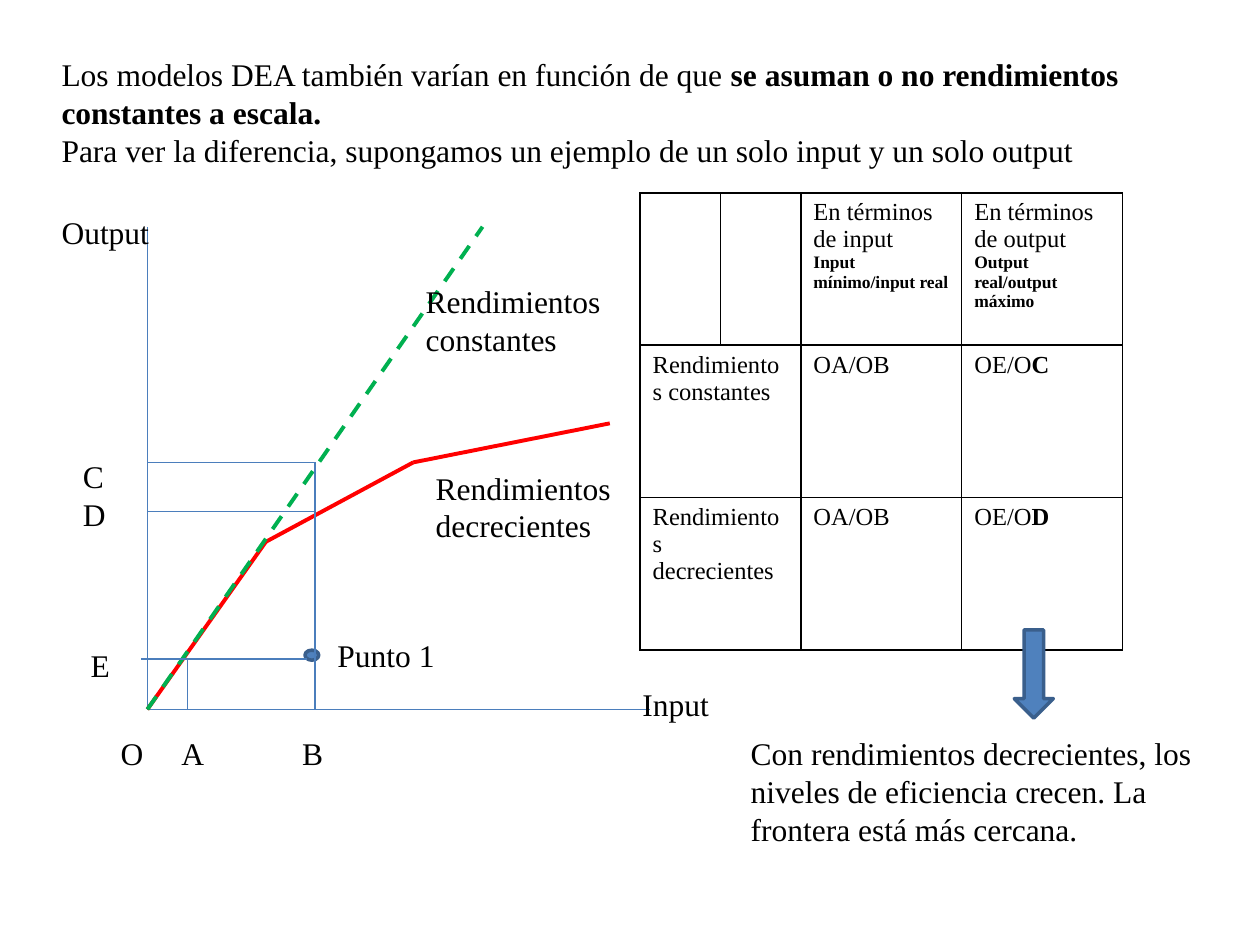
from dataclasses import dataclass

from lxml import etree
from pptx import Presentation
from pptx.dml.color import RGBColor
from pptx.enum.dml import MSO_LINE
from pptx.enum.shapes import MSO_CONNECTOR, MSO_SHAPE
from pptx.oxml.ns import qn
from pptx.util import Inches, Pt

STRAIGHT = MSO_CONNECTOR.STRAIGHT
DASH = MSO_LINE.DASH
OVAL = MSO_SHAPE.OVAL
DOWN_ARROW = MSO_SHAPE.DOWN_ARROW


@dataclass(frozen=True)
class Theme:
    font: str = "Times New Roman"
    ink: str = "000000"
    guide: str = "4B7EBC"
    fill: str = "4F81BD"
    outline: str = "3A5F8C"
    decreasing: str = "FF0000"
    constant: str = "00B050"
    body: int = 18
    cell: int = 14
    note: int = 10
    thin: float = 0.75
    thick: float = 2.25
    border: float = 1
    edge: float = 2


THEME = Theme()


def color(value):
    return RGBColor.from_string(value)


def add_span(para, text, size=THEME.body, bold=False):
    span = para.add_run()
    span.text = text
    span.font.name = THEME.font
    span.font.size = Pt(size)
    span.font.bold = bold
    span.font.color.rgb = color(THEME.ink)


def fill_frame(frame, paragraphs):
    for index, spans in enumerate(paragraphs):
        para = frame.add_paragraph() if index else frame.paragraphs[0]
        for span in spans:
            add_span(para, *span)


def add_text(page, box, paragraphs):
    frame = page.shapes.add_textbox(*map(Inches, box)).text_frame
    frame.word_wrap = True
    fill_frame(frame, paragraphs)


def add_line(page, start, end, line_color=THEME.guide, width=THEME.thin, dash=None):
    line = page.shapes.add_connector(STRAIGHT, *map(Inches, start + end))
    line.line.color.rgb = color(line_color)
    line.line.width = Pt(width)
    if dash:
        line.line.dash_style = dash
    etree.SubElement(line._element.spPr, qn("a:effectLst"))


def add_solid(page, kind, box):
    shape = page.shapes.add_shape(kind, *map(Inches, box))
    shape.shadow.inherit = False
    shape.fill.solid()
    shape.fill.fore_color.rgb = color(THEME.fill)
    shape.line.color.rgb = color(THEME.outline)
    shape.line.width = Pt(THEME.edge)


def add_intro(page, box):
    add_text(page, box, [
        [("Los modelos DEA también varían en función de que ",),
         ("se asuman o no rendimientos constantes a escala.", THEME.body, True)],
        [("Para ver la diferencia, supongamos un ejemplo de un solo input "
          "y un solo output",)],
    ])


def add_frontier(page, box):
    left, top, width, height = box

    def at(x, y):
        return left + x, top + height - y

    input_a, input_b = 0.32, 1.33
    output_e, output_d, output_c = 0.4, 1.57, 1.96

    add_line(page, at(0, height), at(0, 0))
    add_line(page, at(0, 0), at(width, 0))

    frontier = [(0, 0), (0.94, 1.33), (2.11, output_c), (3.67, 2.27)]
    for start, end in zip(frontier, frontier[1:]):
        add_line(page, at(*start), at(*end), THEME.decreasing, THEME.thick)
    add_line(page, at(0, 0), at(2.66, height), THEME.constant, THEME.thick, DASH)

    add_solid(page, OVAL, (*at(1.25, 0.47), 0.11, 0.08))
    add_line(page, at(input_b, 0), at(input_b, output_c))
    add_line(page, at(input_a, 0), at(input_a, output_e))
    add_line(page, at(1.27, output_e), at(-0.05, output_e))
    for output in (output_d, output_c):
        add_line(page, at(input_b, output), at(0, output))

    labels = [
        ("Output", -0.78, 3.99, 1.09, 0.4),
        ("Input", 3.83, 0.24, 1.48, 0.4),
        ("Punto 1", 1.41, 0.63, 1.09, 0.4),
        ("Rendimientos constantes", 2.11, 3.44, 1.88, 0.71),
        ("Rendimientos decrecientes", 2.19, 1.96, 1.88, 0.71),
        ("O", -0.31, -0.15, 0.45, 0.4),
        ("A", 0.17, -0.15, 0.45, 0.4),
        ("B", 1.13, -0.15, 0.45, 0.4),
        ("C", -0.61, 2.05, 0.45, 0.4),
        ("D", -0.61, 1.75, 0.45, 0.4),
        ("E", -0.55, 0.55, 0.45, 0.4),
    ]
    for text, x, y, label_width, label_height in labels:
        add_text(page, (*at(x, y), label_width, label_height), [[(text,)]])


def add_borders(cell):
    properties = cell._tc.get_or_add_tcPr()
    for index, side in enumerate(("lnL", "lnR", "lnT", "lnB")):
        border = etree.Element(qn(f"a:{side}"), w=str(Pt(THEME.border)))
        solid = etree.SubElement(border, qn("a:solidFill"))
        etree.SubElement(solid, qn("a:srgbClr"), val=THEME.ink)
        properties.insert(index, border)


def add_efficiency_table(page, box):
    width, height = box[2:]
    size, note = THEME.cell, THEME.note
    rows = [
        {2: [[("En términos de input", size)],
             [("Input mínimo/input real", note, True)]],
         3: [[("En términos de output", size)],
             [("Output real/output máximo", note, True)]]},
    ]
    for name, limit in (("constantes", "C"), ("decrecientes", "D")):
        rows.append({0: [[(f"Rendimientos {name}", size)]],
                     2: [[("OA/OB", size)]],
                     3: [[("OE/O", size), (limit, size, True)]]})

    table = page.shapes.add_table(len(rows), 4, *map(Inches, box)).table
    table.first_row = False
    table.horz_banding = False
    for column, share in zip(table.columns, (1, 1, 2, 2)):
        column.width = Inches(width * share / 6)
    for row in table.rows:
        row.height = Inches(height / len(rows))
    for row_index, contents in enumerate(rows):
        for column_index in range(4):
            cell = table.cell(row_index, column_index)
            cell.fill.background()
            add_borders(cell)
            fill_frame(cell.text_frame, contents.get(column_index, []))
        if row_index:
            table.cell(row_index, 0).merge(table.cell(row_index, 1))


def add_conclusion(page, box):
    left, top, width, height = box
    add_solid(page, DOWN_ARROW, (left + 2.19, top, 0.31, 0.7))
    add_text(page, (left, top + 0.78, width, height - 0.78), [
        [("Con rendimientos decrecientes, los niveles de eficiencia crecen. "
          "La frontera está más cercana.",)],
    ])


def main():
    deck = Presentation()
    deck.slide_width, deck.slide_height = Inches(10), Inches(7.5)
    page = deck.slides.add_slide(deck.slide_layouts[6])
    add_intro(page, (0.39, 0.39, 9.14, 1.62))
    add_frontier(page, (1.17, 1.8, 3.99, 3.83))
    add_efficiency_table(page, (5.08, 1.53, 3.83, 3.63))
    add_conclusion(page, (5.86, 5, 3.98, 1.79))
    deck.save("out.pptx")


if __name__ == "__main__":
    main()
